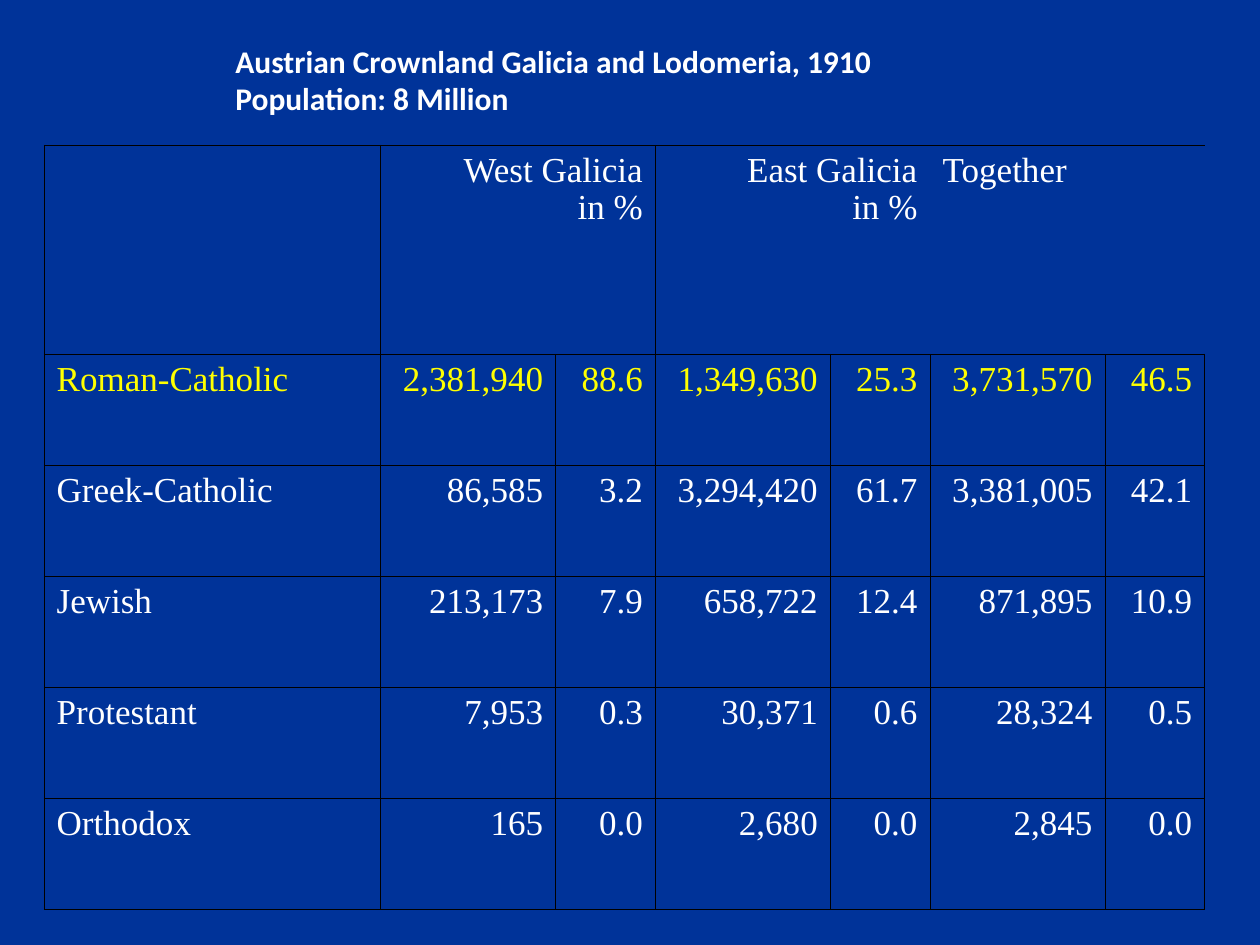
from dataclasses import dataclass

import pptx
import pptx.dml.color
import pptx.enum.text
import pptx.oxml
import pptx.oxml.ns
import pptx.util

Pt = pptx.util.Pt
Align = pptx.enum.text.PP_ALIGN
NO_STYLE_NO_GRID = "{2D5ABB26-0587-4C30-8999-92F81FD0307C}"


@dataclass(frozen=True)
class Theme:
    background: str = "003399"
    text: str = "FFFFFF"
    highlight: str = "FFFF00"
    border: str = "000000"
    title_font: str = "Calibri"
    table_font: str = "Times New Roman"
    title_size: float = 18
    table_size: float = 20
    border_width: float = 0.45
    line_spacing: float = 0.93
    tab_step: float = 35.36
    tab_count: int = 8


@dataclass(frozen=True)
class Region:
    heading: str
    align: Align
    borders: str


@dataclass(frozen=True)
class Denomination:
    name: str
    figures: tuple[str, ...]
    color: str


THEME = Theme()
TITLE = "Austrian Crownland Galicia and Lodomeria, 1910\nPopulation: 8 Million"
REGIONS = (
    Region("West Galicia\nin %", Align.RIGHT, "LTB"),
    Region("East Galicia\nin %", Align.RIGHT, "TB"),
    Region("Together", Align.JUSTIFY, "TB"),
)
DENOMINATIONS = (
    Denomination("Roman-Catholic", ("2,381,940", "88.6", "1,349,630", "25.3", "3,731,570", "46.5"), THEME.highlight),
    Denomination("Greek-Catholic", ("86,585", "3.2", "3,294,420", "61.7", "3,381,005", "42.1"), THEME.text),
    Denomination("Jewish", ("213,173", "7.9", "658,722", "12.4", "871,895", "10.9"), THEME.text),
    Denomination("Protestant", ("7,953", "0.3", "30,371", "0.6", "28,324", "0.5"), THEME.text),
    Denomination("Orthodox", ("165", "0.0", "2,680", "0.0", "2,845", "0.0"), THEME.text),
)
COLUMN_WIDTHS = (192.4,) + (100, 57) * len(REGIONS)
ROW_HEIGHTS = (119.4,) + (63.43,) * len(DENOMINATIONS)


def rgb(color: str) -> pptx.dml.color.RGBColor:
    return pptx.dml.color.RGBColor.from_string(color)


def format_runs(paragraph, font: str, size: float, color: str, bold: bool = False) -> None:
    for run in paragraph.runs:
        run.font.name = font
        run.font.size = Pt(size)
        run.font.bold = bold
        run.font.color.rgb = rgb(color)


def add_tabs(paragraph) -> None:
    stops = "".join(
        f'<a:tab pos="{Pt(step * THEME.tab_step)}" algn="l"/>' for step in range(THEME.tab_count)
    )
    paragraph._p.get_or_add_pPr().append(
        pptx.oxml.parse_xml(f'<a:tabLst {pptx.oxml.ns.nsdecls("a")}>{stops}</a:tabLst>')
    )


def style_cell(cell, borders: str) -> None:
    """Clear the fill and draw the given sides, a string of letters from LRTB."""
    cell.margin_left = cell.margin_right = Pt(7.2)
    cell.margin_top, cell.margin_bottom = Pt(5), Pt(3.6)
    cell.fill.background()
    properties = cell._tc.get_or_add_tcPr()
    for index, side in enumerate(side for side in "LRTB" if side in borders):
        properties.insert(index, pptx.oxml.parse_xml(
            f'<a:ln{side} {pptx.oxml.ns.nsdecls("a")} w="{Pt(THEME.border_width)}">'
            f'<a:solidFill><a:srgbClr val="{THEME.border}"/></a:solidFill></a:ln{side}>'
        ))


def write_cell(cell, text: str, align: Align, color: str, borders: str = "LRTB") -> None:
    style_cell(cell, borders)
    cell.text_frame.text = text
    for paragraph in cell.text_frame.paragraphs:
        paragraph.alignment = align
        paragraph.line_spacing = THEME.line_spacing
        add_tabs(paragraph)
        format_runs(paragraph, THEME.table_font, THEME.table_size, color)


def add_title(slide) -> None:
    title = slide.shapes.add_textbox(Pt(127.4), Pt(20.2), Pt(483), Pt(72.7)).text_frame
    title.word_wrap = True
    title.auto_size = pptx.enum.text.MSO_AUTO_SIZE.SHAPE_TO_FIT_TEXT
    title.text = TITLE
    for paragraph in title.paragraphs:
        format_runs(paragraph, THEME.title_font, THEME.title_size, THEME.text, bold=True)


def add_population_table(slide) -> None:
    frame = slide.shapes.add_table(
        len(ROW_HEIGHTS), len(COLUMN_WIDTHS),
        Pt(25.2), Pt(83), Pt(sum(COLUMN_WIDTHS)), Pt(sum(ROW_HEIGHTS)),
    )
    population = frame.table
    population.first_row = population.horz_banding = False
    population._tbl.tblPr.find(pptx.oxml.ns.qn("a:tableStyleId")).text = NO_STYLE_NO_GRID
    for column, width in zip(population.columns, COLUMN_WIDTHS):
        column.width = Pt(width)
    for row, height in zip(population.rows, ROW_HEIGHTS):
        row.height = Pt(height)

    style_cell(population.cell(0, 0), "LRTB")
    for index, region in enumerate(REGIONS):
        heading = population.cell(0, 1 + 2 * index)
        covered = population.cell(0, 2 + 2 * index)
        heading.merge(covered)
        write_cell(heading, region.heading, region.align, THEME.text, region.borders)
        style_cell(covered, "T")

    for row, denomination in enumerate(DENOMINATIONS, start=1):
        write_cell(population.cell(row, 0), denomination.name, Align.JUSTIFY, denomination.color)
        for column, figure in enumerate(denomination.figures, start=1):
            open_top = row == 1 and column % 2 == 0
            write_cell(population.cell(row, column), figure, Align.RIGHT,
                       denomination.color, "LRB" if open_top else "LRTB")


def main() -> None:
    presentation = pptx.Presentation()
    presentation.slide_width, presentation.slide_height = Pt(720), Pt(540)
    slide = presentation.slides.add_slide(presentation.slide_layouts[6])
    slide.background.fill.solid()
    slide.background.fill.fore_color.rgb = rgb(THEME.background)
    add_title(slide)
    add_population_table(slide)
    presentation.save("out.pptx")


if __name__ == "__main__":
    main()
